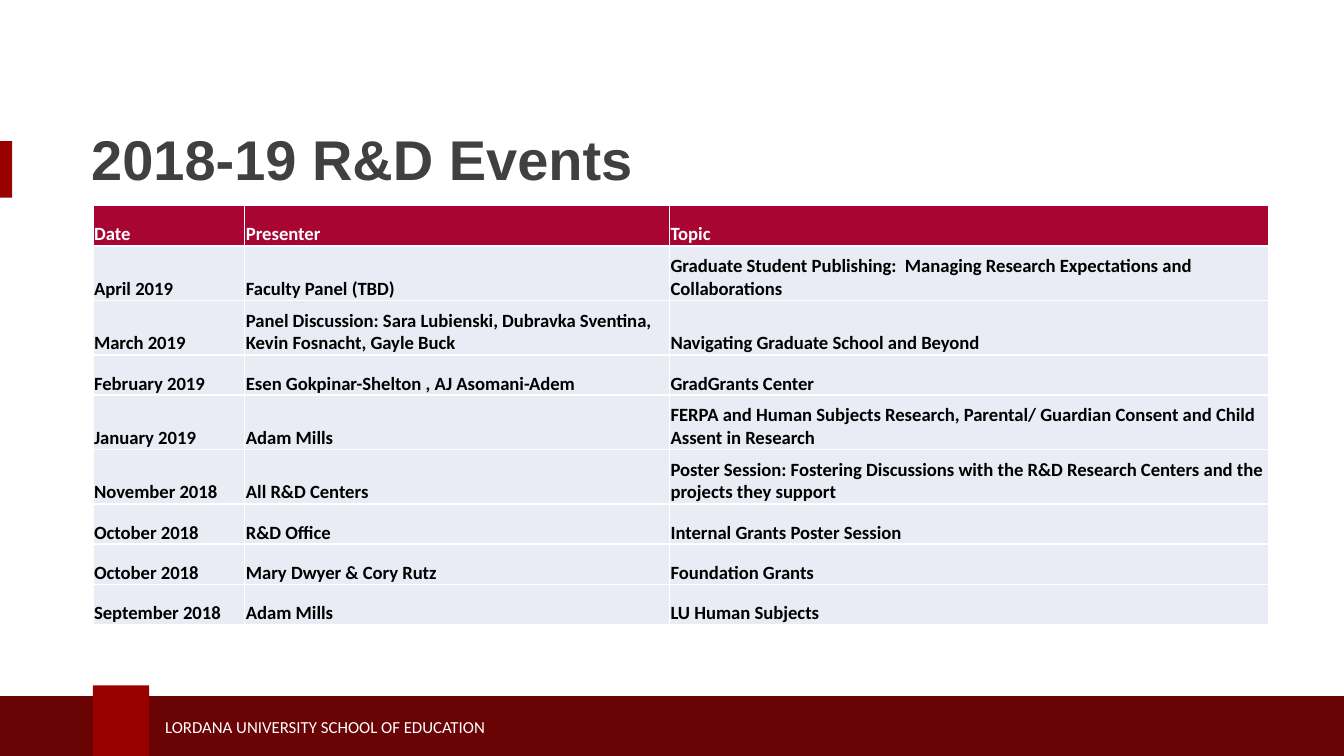
from lxml import etree
from pptx import Presentation
from pptx import util as u
from pptx.dml.color import RGBColor
from pptx.enum import shapes, text
from pptx.oxml.ns import qn

# Content
TITLE = "2018-19 R&D Events"
FOOTER = "LORDANA UNIVERSITY SCHOOL OF EDUCATION"
HEADINGS = ("Date", "Presenter", "Topic")
EVENTS = [
    ("April 2019", "Faculty Panel (TBD)",
     "Graduate Student Publishing:  Managing Research Expectations and Collaborations"),
    ("March 2019",
     "Panel Discussion: Sara Lubienski, Dubravka Sventina, Kevin Fosnacht, Gayle Buck",
     "Navigating Graduate School and Beyond"),
    ("February 2019", "Esen Gokpinar-Shelton , AJ Asomani-Adem", "GradGrants Center"),
    ("January 2019", "Adam Mills",
     "FERPA and Human Subjects Research, Parental/ Guardian Consent and Child Assent in Research"),
    ("November 2018", "All R&D Centers",
     "Poster Session: Fostering Discussions with the R&D Research Centers and the projects they support"),
    ("October 2018", "R&D Office", "Internal Grants Poster Session"),
    ("October 2018", "Mary Dwyer & Cory Rutz", "Foundation Grants"),
    ("September 2018", "Adam Mills", "LU Human Subjects"),
]

THEME = {
    "accent": "990000", "band": "690304", "heading_fill": "A80532", "row_fill": "E9EBF5",
    "white": "FFFFFF", "black": "000000", "title": "404041",
    "title_font": "Arial", "body_font": "Calibri",
    "title_size": 30, "table_size": 10, "footer_size": 9,
}

# Layout
SLIDE_WIDTH = 10
SLIDE_HEIGHT = SLIDE_WIDTH * 9 / 16
COLUMN_WIDTHS = (1.13, 3.16, 4.46)
LINE_CAPACITY = (20, 60, 70)  # characters that fit on one line of each column
TABLE_LEFT, TABLE_TOP, TABLE_HEIGHT = 0.69, 1.53, 3.12
SINGLE_ROW = 0.3


def color(role):
    return RGBColor.from_string(THEME[role])


def style(paragraph, kind, role, bold=False):
    font = paragraph.font
    font.name = THEME["title_font" if kind == "title" else "body_font"]
    font.size = u.Pt(THEME[f"{kind}_size"])
    font.bold = bold
    font.color.rgb = color(role)


def add_block(slide, box, role):
    block = slide.shapes.add_shape(shapes.MSO_SHAPE.RECTANGLE, *map(u.Inches, box))
    block.shadow.inherit = False
    block.fill.solid()
    block.fill.fore_color.rgb = color(role)
    block.line.fill.background()


def add_label(slide, box, wording, kind, role, bold=False):
    frame = slide.shapes.add_textbox(*map(u.Inches, box)).text_frame
    frame.word_wrap = True
    frame.vertical_anchor = text.MSO_ANCHOR.MIDDLE
    paragraph = frame.paragraphs[0]
    paragraph.text = wording
    style(paragraph, kind, role, bold)
    return paragraph


def add_borders(cell):
    properties = cell._tc.get_or_add_tcPr()
    for side in ("lnL", "lnR", "lnT", "lnB"):
        border = etree.SubElement(properties, qn(f"a:{side}"), w=str(u.Pt(1)))
        fill = etree.SubElement(border, qn("a:solidFill"))
        etree.SubElement(fill, qn("a:srgbClr"), val=THEME["white"])


def fill_cell(cell, wording, fill_role, text_role):
    add_borders(cell)
    cell.fill.solid()
    cell.fill.fore_color.rgb = color(fill_role)
    cell.margin_left = cell.margin_right = cell.margin_top = u.Inches(0.01)
    cell.margin_bottom = 0
    cell.vertical_anchor = text.MSO_ANCHOR.BOTTOM
    cell.text = wording
    style(cell.text_frame.paragraphs[0], "table", text_role, bold=True)


def row_heights(rows):
    """Give one-line rows a fixed height and share the rest among wrapped rows."""
    wraps = [any(len(entry) > fit for entry, fit in zip(row, LINE_CAPACITY)) for row in rows]
    double_row = (TABLE_HEIGHT - SINGLE_ROW * wraps.count(False)) / wraps.count(True)
    return [double_row if wrapped else SINGLE_ROW for wrapped in wraps]


def add_schedule(slide):
    rows = [HEADINGS, *EVENTS]
    schedule = slide.shapes.add_table(
        len(rows), len(HEADINGS), u.Inches(TABLE_LEFT), u.Inches(TABLE_TOP),
        u.Inches(sum(COLUMN_WIDTHS)), u.Inches(TABLE_HEIGHT)).table
    schedule.horz_banding = False
    for column, width in zip(schedule.columns, COLUMN_WIDTHS):
        column.width = u.Inches(width)
    for r, (row, height) in enumerate(zip(rows, row_heights(rows))):
        schedule.rows[r].height = u.Inches(height)
        roles = ("row_fill", "black") if r else ("heading_fill", "white")
        for c, entry in enumerate(row):
            fill_cell(schedule.cell(r, c), entry, *roles)


def main():
    deck = Presentation()
    deck.slide_width, deck.slide_height = u.Inches(SLIDE_WIDTH), u.Inches(SLIDE_HEIGHT)
    slide = deck.slides.add_slide(deck.slide_layouts[6])

    # Side accent and footer
    add_block(slide, (0, 1.05, 0.09, 0.42), "accent")
    add_block(slide, (-0.03, 5.18, 10.09, 0.5), "band")
    add_block(slide, (TABLE_LEFT, 5.1, 0.42, 0.58), "accent")
    add_label(slide, (1.13, 5.28, 3.95, 0.25), FOOTER, "footer", "white")

    # Title and schedule
    heading = add_label(slide, (0.58, 0.83, 8.75, 0.76), TITLE, "title", "title", bold=True)
    heading.line_spacing = 0.9
    add_schedule(slide)

    deck.save("out.pptx")


if __name__ == "__main__":
    main()
